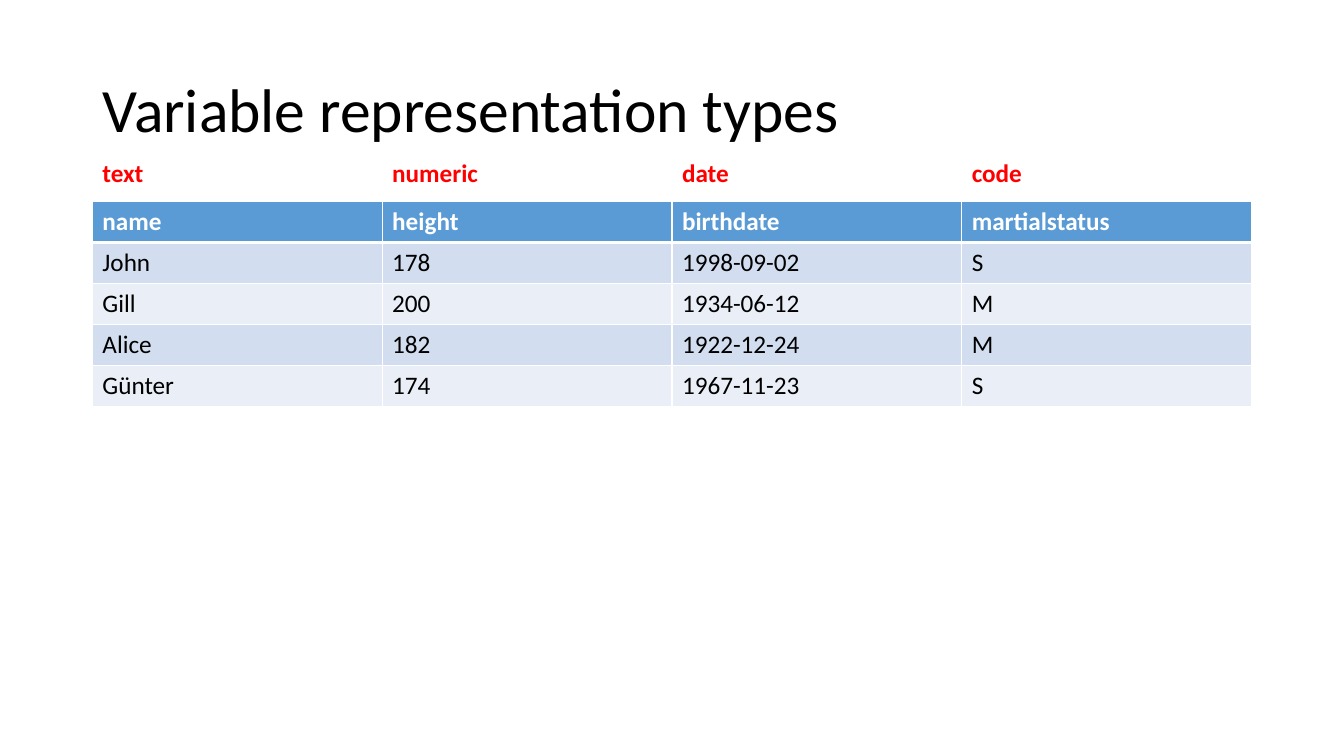
from lxml.etree import SubElement
from pptx import Presentation
from pptx.dml.color import RGBColor
from pptx.enum.text import MSO_ANCHOR, MSO_AUTO_SIZE, PP_ALIGN
from pptx.oxml.ns import qn
from pptx.util import Pt

PX = 9525
LEFT, WIDTH, ROW_HEIGHT = 88, 1104, 39
COLORS = {
    "black": "000000",
    "white": "FFFFFF",
    "red": "FF0000",
    "header": "5B9BD5",
    "dark band": "D2DEEF",
    "light band": "EAEFF7",
}
VARIABLE_TYPES = [["text", "numeric", "date", "code"]]
PEOPLE = [
    ["name", "height", "birthdate", "martialstatus"],
    ["John", "178", "1998-09-02", "S"],
    ["Gill", "200", "1934-06-12", "M"],
    ["Alice", "182", "1922-12-24", "M"],
    ["Günter", "174", "1967-11-23", "S"],
]


def write_text(paragraph, text, size, color, bold):
    run = paragraph.add_run()
    run.text = text
    for name, value in {"name": "Calibri", "size": Pt(size), "bold": bold}.items():
        setattr(run.font, name, value)
    run.font.color.rgb = RGBColor.from_string(COLORS[color])


def add_grid(slide, top, rows, header_color, header_fill):
    shape = slide.shapes.add_table(
        len(rows), len(rows[0]), LEFT * PX, top * PX, WIDTH * PX, len(rows) * ROW_HEIGHT * PX
    )
    for row_index, row in enumerate(rows):
        header = row_index == 0
        band = "dark band" if row_index % 2 else "light band"
        fill = header_fill if header else band
        for column_index, text in enumerate(row):
            cell = shape.table.cell(row_index, column_index)
            write_text(
                cell.text_frame.paragraphs[0], text, 18, header_color if header else "black", header
            )
            properties = cell._tc.get_or_add_tcPr()
            widths = {"lnL": 1, "lnR": 1, "lnT": 3 if row_index == 1 else 1, "lnB": 3 if header else 1}
            for side, width in widths.items():
                line = SubElement(properties, qn(f"a:{side}"), w=str(Pt(width)))
                solid = SubElement(line, qn("a:solidFill"))
                SubElement(solid, qn("a:srgbClr"), val=COLORS["white"])
            if fill:
                cell.fill.solid()
                cell.fill.fore_color.rgb = RGBColor.from_string(COLORS[fill])
            else:
                cell.fill.background()


presentation = Presentation()
presentation.slide_width = 1280 * PX
presentation.slide_height = 720 * PX
slide = presentation.slides.add_slide(presentation.slide_layouts[5])

title = slide.shapes.title
for name, value in {"left": LEFT, "top": 38, "width": WIDTH, "height": 139}.items():
    setattr(title, name, value * PX)
title.text_frame.auto_size = MSO_AUTO_SIZE.NONE
title.text_frame.vertical_anchor = MSO_ANCHOR.MIDDLE
paragraph = title.text_frame.paragraphs[0]
paragraph.alignment = PP_ALIGN.LEFT
paragraph.line_spacing = 0.9
write_text(paragraph, "Variable representation types", 44, "black", False)

add_grid(slide, 192, PEOPLE, "white", "header")
add_grid(slide, 146, VARIABLE_TYPES, "red", None)

presentation.save("out.pptx")
